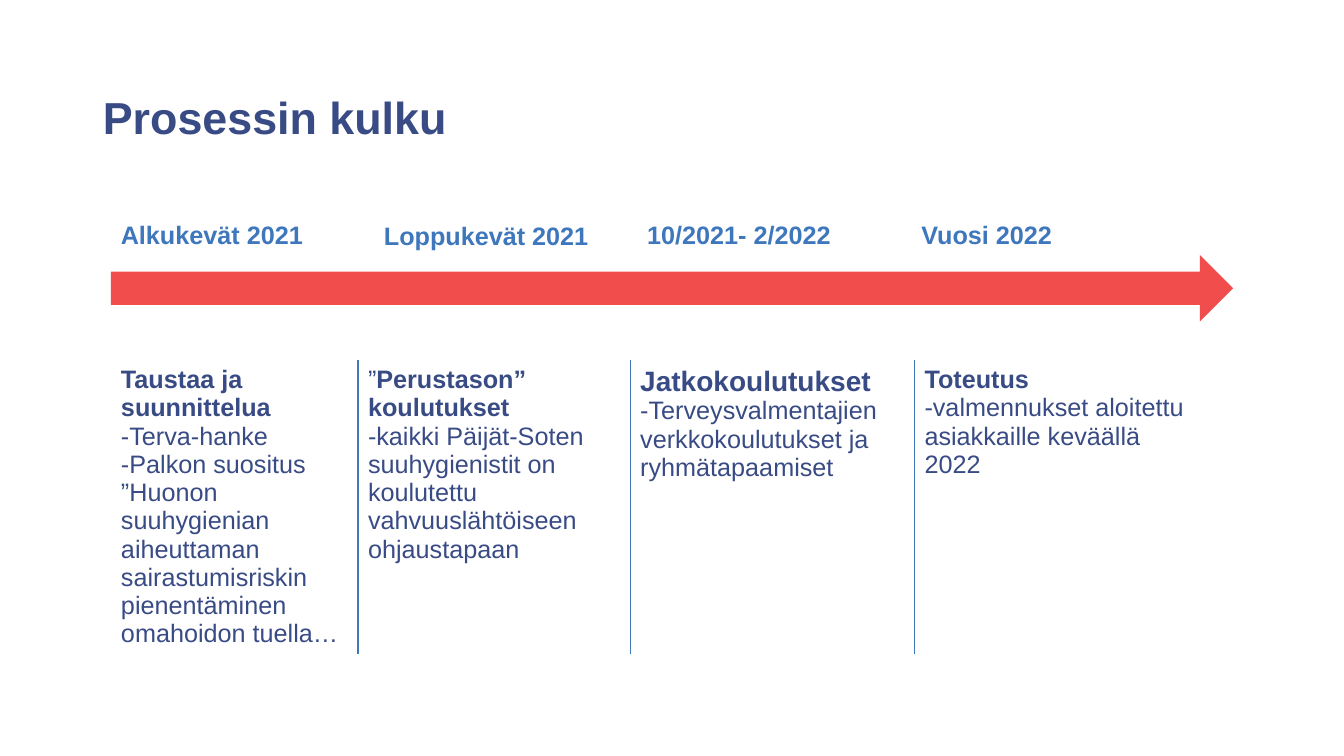
from lxml.etree import SubElement
from pptx import Presentation
from pptx.dml.color import RGBColor
from pptx.enum.shapes import MSO_SHAPE
from pptx.enum.text import MSO_ANCHOR, MSO_AUTO_SIZE, PP_ALIGN
from pptx.oxml.ns import qn
from pptx.util import Inches, Pt

NAVY = RGBColor(0x39, 0x4B, 0x85)
BLUE = RGBColor(0x3E, 0x77, 0xBC)
RED = RGBColor(0xF0, 0x4D, 0x4C)
WHITE = RGBColor(0xFF, 0xFF, 0xFF)


def write(paragraph, text, size=18, color=NAVY, bold=False):
    run = paragraph.add_run()
    run.text = text
    font = run.font
    font.name, font.size, font.bold = "Arial", Pt(size), bold
    font.color.rgb = color
    paragraph.alignment = PP_ALIGN.LEFT


def set_borders(cell, **colors):
    """Draw 1 pt cell borders; keys are L, R, T and B, in that order."""
    properties = cell._tc.get_or_add_tcPr()
    for index, (side, color) in enumerate(colors.items()):
        line = properties.makeelement(qn(f"a:ln{side}"), {"w": str(Pt(1))})
        fill = SubElement(line, qn("a:solidFill"))
        SubElement(fill, qn("a:srgbClr"), val=str(color))
        properties.insert(index, line)


prs = Presentation()
prs.slide_width, prs.slide_height = Inches(13.33), Inches(7.5)
slide = prs.slides.add_slide(prs.slide_layouts[5])

title = slide.shapes.title
title.left, title.top = Inches(0.92), Inches(0.6)
title.width, title.height = Inches(11.5), Inches(1.11)
title.text_frame.vertical_anchor = MSO_ANCHOR.MIDDLE
write(title.text_frame.paragraphs[0], "Prosessin kulku", size=32, bold=True)

# Each phase: column width, then paragraphs of (text, size, bold) runs
phases = [
    (2.45, [
        [("Taustaa ja suunnittelua", 18, True)],
        [("-Terva-hanke", 18, False)],
        [("-Palkon suositus", 18, False)],
        [("”Huonon suuhygienian aiheuttaman sairastumisriskin "
          "pienentäminen omahoidon tuella…", 18, False)],
    ]),
    (2.7, [
        [("”", 18, False), ("Perustason” koulutukset", 18, True)],
        [("-kaikki Päijät-Soten suuhygienistit on koulutettu "
          "vahvuuslähtöiseen ohjaustapaan", 18, False)],
    ]),
    (2.82, [
        [("Jatkokoulutukset", 20, True)],
        [("-Terveysvalmentajien verkkokoulutukset ja ryhmätapaamiset", 18, False)],
    ]),
    (2.93, [
        [("Toteutus", 18, True)],
        [("-valmennukset aloitettu asiakkaille keväällä 2022", 18, False)],
    ]),
]
phase_table = slide.shapes.add_table(
    1, len(phases), Inches(1.1), Inches(3.58), Inches(10.9), Inches(2.9)).table
phase_table.first_row = phase_table.horz_banding = False
for col, (width, paragraphs) in enumerate(phases):
    phase_table.columns[col].width = Inches(width)
    cell = phase_table.cell(0, col)
    cell.fill.background()
    set_borders(cell,
                L=WHITE if col == 0 else BLUE,
                R=WHITE if col == len(phases) - 1 else BLUE,
                T=WHITE, B=WHITE)
    for index, runs in enumerate(paragraphs):
        frame = cell.text_frame
        paragraph = frame.add_paragraph() if index else frame.paragraphs[0]
        for text, size, bold in runs:
            write(paragraph, text, size=size, bold=bold)

timeline = slide.shapes.add_shape(
    MSO_SHAPE.RIGHT_ARROW, Inches(1.1), Inches(2.53), Inches(11.13), Inches(0.66))
timeline.shadow.inherit = False
timeline.fill.solid()
timeline.fill.fore_color.rgb = RED
timeline.line.fill.background()

periods = [
    ("Alkukevät 2021", 1.1, 2.13),
    ("Loppukevät 2021", 3.71, 2.14),
    ("10/2021- 2/2022", 6.32, 2.13),
    ("Vuosi 2022", 9.04, 2.13),
]
for period, left, top in periods:
    frame = slide.shapes.add_textbox(
        Inches(left), Inches(top), Inches(2.37), Inches(0.4)).text_frame
    frame.word_wrap = True
    frame.auto_size = MSO_AUTO_SIZE.SHAPE_TO_FIT_TEXT
    write(frame.paragraphs[0], period, color=BLUE, bold=True)

prs.save("out.pptx")
